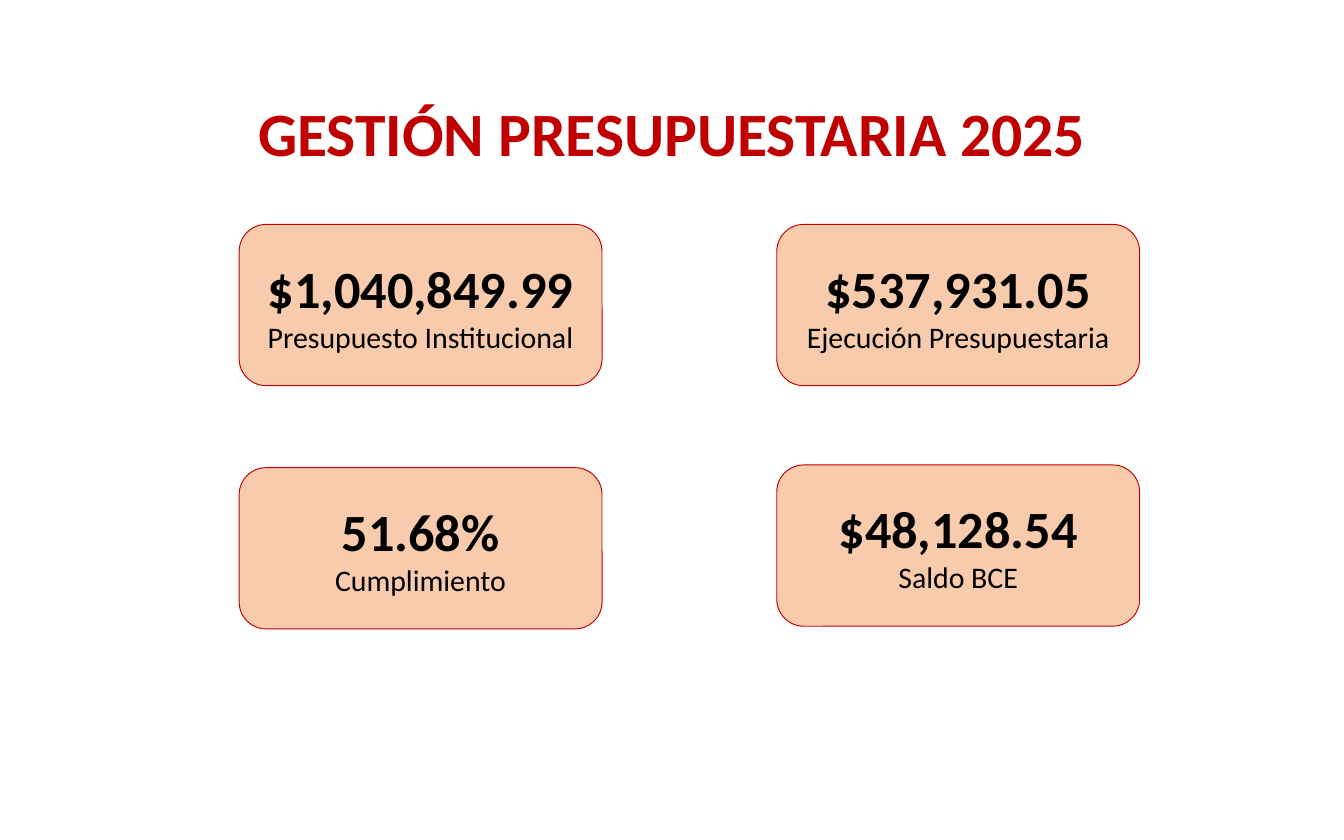
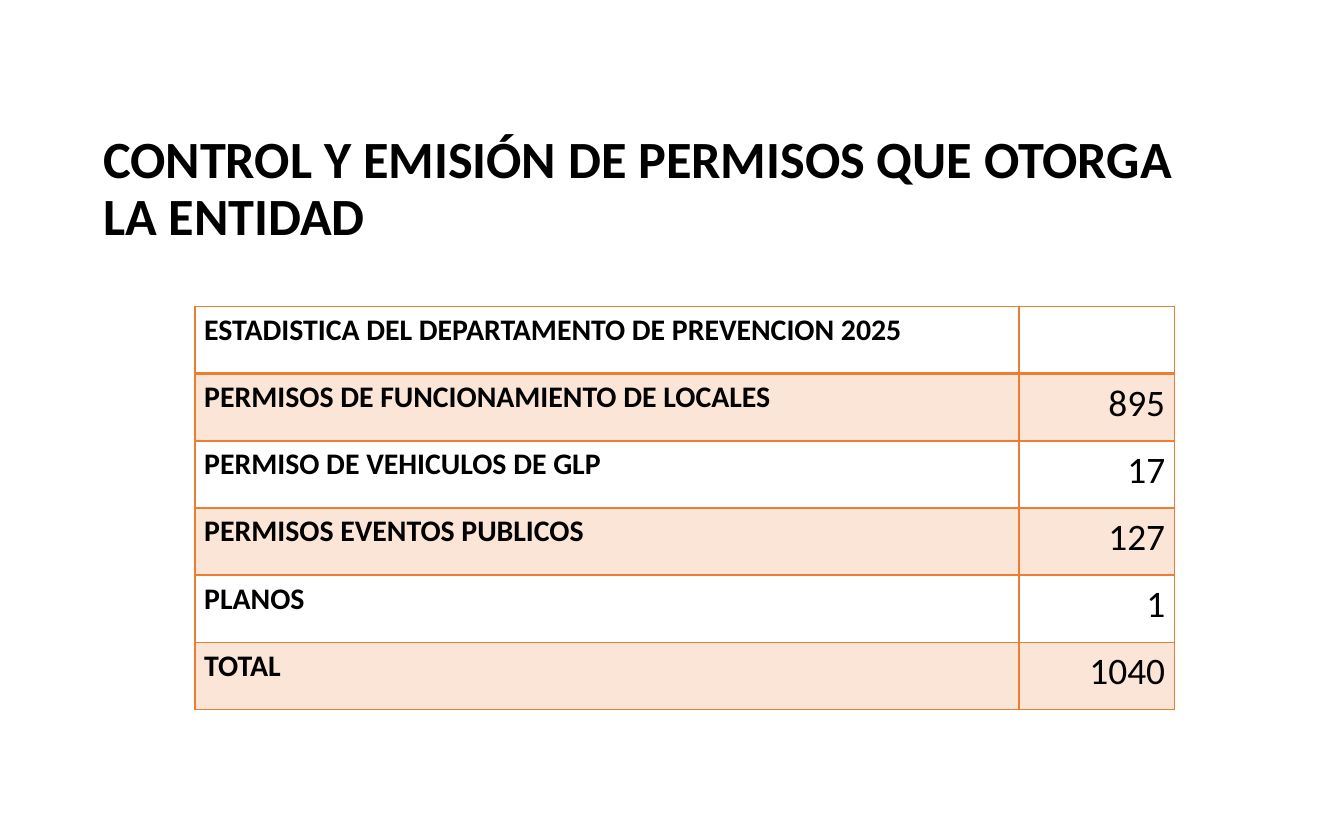
"""Builds the budget and permit statistics slides."""
from dataclasses import dataclass

from lxml import etree
from pptx import Presentation
from pptx.dml.color import RGBColor
from pptx.enum.shapes import MSO_SHAPE
from pptx.enum.text import MSO_ANCHOR, PP_ALIGN
from pptx.oxml.ns import qn
from pptx.slide import Slide
from pptx.table import _Cell
from pptx.text.text import _Paragraph
from pptx.util import Inches, Pt

ROUNDED = MSO_SHAPE.ROUNDED_RECTANGLE
MIDDLE = MSO_ANCHOR.MIDDLE
LEFT, CENTER = PP_ALIGN.LEFT, PP_ALIGN.CENTER
RIGHT, JUSTIFY = PP_ALIGN.RIGHT, PP_ALIGN.JUSTIFY

FONT = "Calibri"
BLACK = RGBColor(0x00, 0x00, 0x00)
RED = RGBColor(0xC0, 0x00, 0x00)
PEACH = RGBColor(0xF8, 0xCB, 0xAD)
ORANGE = RGBColor(0xED, 0x7D, 0x31)
PALE_ORANGE = RGBColor(0xFB, 0xE5, 0xD6)

CARD_WIDTH, CARD_HEIGHT = 2.7, 1.2
LEFT_COLUMN, RIGHT_COLUMN = 1.78, 5.78
TABLE_LEFT, TABLE_TOP = 1.45, 2.28
COLUMN_WIDTHS = (6.13, 1.16)
ROW_HEIGHT = 0.5


@dataclass(frozen=True)
class Title:
    """A slide title with its box and style."""
    text: str
    left: float
    top: float
    width: float
    height: float
    size: float
    color: RGBColor
    alignment: PP_ALIGN


@dataclass(frozen=True)
class Card:
    """A budget figure and its label."""
    left: float
    top: float
    figure: str
    label: str


@dataclass(frozen=True)
class PermitRow:
    """A line of the permit table."""
    label: str
    count: str


BUDGET_TITLE = Title("GESTIÓN PRESUPUESTARIA 2025",
                     0.69, 0.55, 8.62, 0.93, 33, RED, CENTER)
PERMIT_TITLE = Title("CONTROL Y EMISIÓN DE PERMISOS QUE OTORGA LA ENTIDAD",
                     0.67, 0.81, 8.62, 1.21, 28, BLACK, LEFT)
CARDS = (
    Card(LEFT_COLUMN, 1.67, "$1,040,849.99", "Presupuesto Institucional"),
    Card(RIGHT_COLUMN, 1.67, "$537,931.05", "Ejecución Presupuestaria"),
    Card(LEFT_COLUMN, 3.48, "51.68%", "Cumplimiento"),
    Card(RIGHT_COLUMN, 3.46, "$48,128.54", "Saldo BCE"),
)
PERMIT_ROWS = (
    PermitRow("ESTADISTICA DEL DEPARTAMENTO DE PREVENCION 2025", ""),
    PermitRow("PERMISOS DE FUNCIONAMIENTO DE LOCALES", "895"),
    PermitRow("PERMISO DE VEHICULOS DE GLP", "17"),
    PermitRow("PERMISOS EVENTOS PUBLICOS", "127"),
    PermitRow("PLANOS", "1"),
    PermitRow("TOTAL", "1040"),
)


def write(paragraph: _Paragraph, text: str, size: float, bold: bool,
          alignment: PP_ALIGN, color: RGBColor = BLACK, spacing: float = 1.0) -> None:
    """Fill a paragraph with one styled run."""
    paragraph.alignment = alignment
    paragraph.line_spacing = spacing
    run = paragraph.add_run()
    run.text = text
    run.font.name = FONT
    run.font.size = Pt(size)
    run.font.bold = bold
    run.font.color.rgb = color


def add_title(slide: Slide, title: Title) -> None:
    """Add a bold title, centred vertically in its box."""
    box = slide.shapes.add_textbox(Inches(title.left), Inches(title.top),
                                   Inches(title.width), Inches(title.height))
    frame = box.text_frame
    frame.word_wrap = True
    frame.vertical_anchor = MIDDLE
    write(frame.paragraphs[0], title.text, title.size, True,
          title.alignment, title.color, 0.9)


def add_card(slide: Slide, card: Card) -> None:
    """Add a rounded card with a figure above its label."""
    shape = slide.shapes.add_shape(ROUNDED, Inches(card.left), Inches(card.top),
                                   Inches(CARD_WIDTH), Inches(CARD_HEIGHT))
    shape.shadow.inherit = False
    shape.fill.solid()
    shape.fill.fore_color.rgb = PEACH
    shape.line.color.rgb = RED
    shape.line.width = Pt(0.5)
    frame = shape.text_frame
    frame.word_wrap = True
    frame.vertical_anchor = MIDDLE
    write(frame.paragraphs[0], card.figure, 28, True, CENTER)
    write(frame.add_paragraph(), card.label, 16, False, CENTER)


def set_borders(cell: _Cell, top: float, bottom: float) -> None:
    """Draw the four orange borders of a cell."""
    properties = cell._tc.get_or_add_tcPr()
    widths = {"a:lnL": 1, "a:lnR": 1, "a:lnT": top, "a:lnB": bottom}
    for position, (tag, width) in enumerate(widths.items()):
        line = etree.Element(qn(tag), w=str(Pt(width)))
        fill = etree.SubElement(line, qn("a:solidFill"))
        etree.SubElement(fill, qn("a:srgbClr"), val=str(ORANGE))
        properties.insert(position, line)


def format_cell(cell: _Cell, row_index: int) -> None:
    """Set the margins, banded fill and borders of a cell."""
    cell.margin_left = cell.margin_right = Inches(0.07)
    cell.margin_top = cell.margin_bottom = Inches(0)
    if row_index % 2:
        cell.fill.solid()
        cell.fill.fore_color.rgb = PALE_ORANGE
    else:
        cell.fill.background()
    set_borders(cell, top=2 if row_index == 1 else 1,
                bottom=2 if row_index == 0 else 1)


def add_permit_table(slide: Slide) -> None:
    """Add the table of permits issued."""
    table = slide.shapes.add_table(
        len(PERMIT_ROWS), len(COLUMN_WIDTHS), Inches(TABLE_LEFT), Inches(TABLE_TOP),
        Inches(sum(COLUMN_WIDTHS)), Inches(ROW_HEIGHT * len(PERMIT_ROWS))).table
    for column, width in zip(table.columns, COLUMN_WIDTHS):
        column.width = Inches(width)
    for row_index, permit in enumerate(PERMIT_ROWS):
        label_cell, count_cell = table.rows[row_index].cells
        for cell in (label_cell, count_cell):
            format_cell(cell, row_index)
        write(label_cell.text_frame.paragraphs[0], permit.label, 16, True,
              JUSTIFY, spacing=1.15)
        if permit.count:
            write(count_cell.text_frame.paragraphs[0], permit.count, 20, False,
                  RIGHT, spacing=1.15)


def main() -> None:
    """Build and save the presentation."""
    presentation = Presentation()
    presentation.slide_width = Inches(10)
    presentation.slide_height = Inches(6.25)
    blank = presentation.slide_layouts[6]

    budget_slide = presentation.slides.add_slide(blank)
    add_title(budget_slide, BUDGET_TITLE)
    for card in CARDS:
        add_card(budget_slide, card)

    permit_slide = presentation.slides.add_slide(blank)
    add_title(permit_slide, PERMIT_TITLE)
    add_permit_table(permit_slide)

    presentation.save("out.pptx")


if __name__ == "__main__":
    main()
